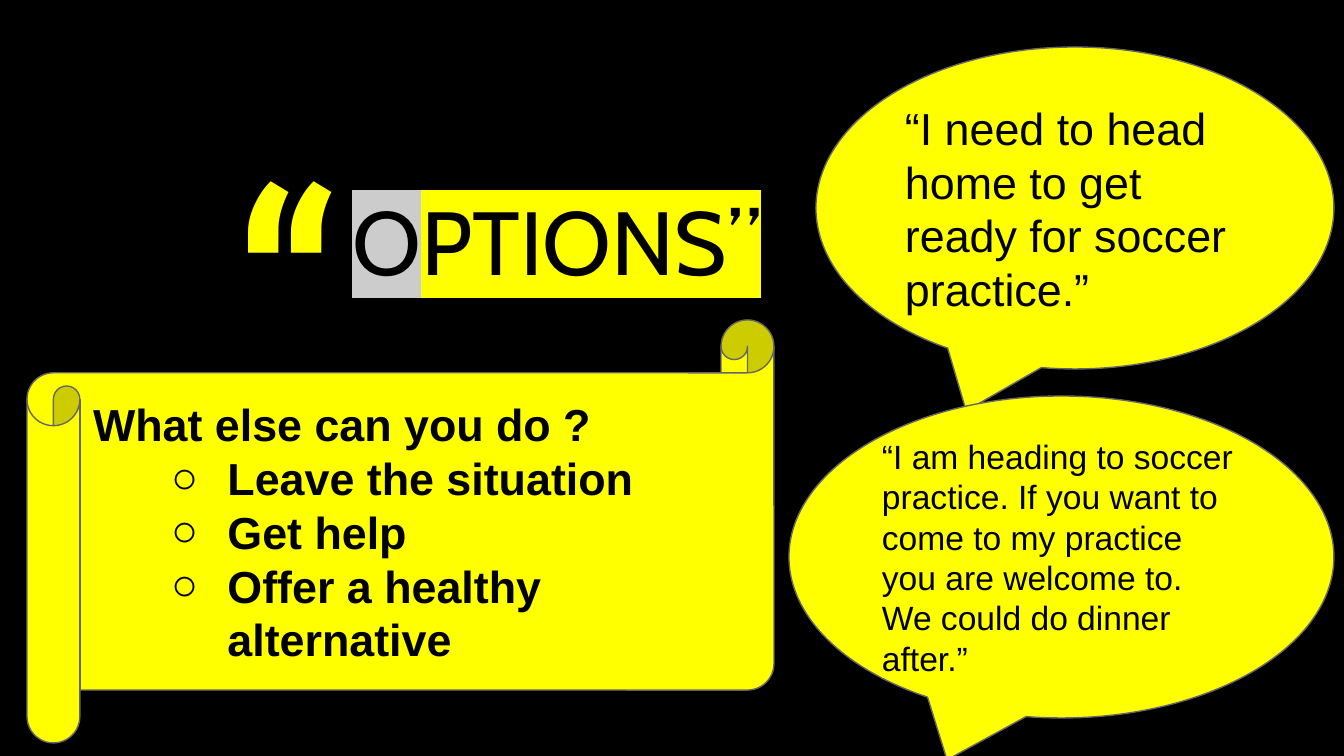
from lxml import etree
from pptx import Presentation
from pptx import util as u
from pptx.dml.color import RGBColor
from pptx.enum import shapes, text
from pptx.oxml.ns import qn

PX = 914400 / 134.4
BLACK = RGBColor(0x00, 0x00, 0x00)
YELLOW = RGBColor(0xFF, 0xFF, 0x00)
SILVER = RGBColor(0xCC, 0xCC, 0xCC)
GRAY = RGBColor(0x66, 0x66, 0x66)


def px(*lengths):
    return [u.Emu(round(n * PX)) for n in lengths]


def add_run(paragraph, words, highlight=None, color=BLACK, **font_format):
    run = paragraph.add_run()
    run.text = words
    run.font.color.rgb = color
    for key, value in font_format.items():
        setattr(run.font, key, value)
    if highlight is not None:
        mark = etree.Element(qn("a:highlight"))
        etree.SubElement(mark, qn("a:srgbClr"), val=str(highlight))
        run.font.fill._xPr.find(qn("a:solidFill")).addnext(mark)


prs = Presentation()
prs.slide_width, prs.slide_height = px(1344, 756)
slide = prs.slides.add_slide(prs.slide_layouts[6])
slide.background.fill.solid()
slide.background.fill.fore_color.rgb = BLACK

frame_format = {"word_wrap": True, "margin_left": u.Inches(0.1), "margin_right": u.Inches(0.1),
                "margin_top": u.Inches(0.1), "margin_bottom": u.Inches(0.1)}

# Heading with its large opening quotation mark
headings = []
for box in ((181, 103, 173, 95), (339, 173, 974, 121)):
    frame = slide.shapes.add_textbox(*px(*box)).text_frame
    for key, value in frame_format.items():
        setattr(frame, key, value)
    headings.append(frame.paragraphs[0])
opening_quote, title = headings
opening_quote.alignment = text.PP_ALIGN.RIGHT
add_run(opening_quote, "“", color=YELLOW, name="Roboto Condensed", size=u.Pt(150), bold=True)
title.space_before = u.Pt(6)
for words, highlight in (("O", SILVER), ("PTIONS”", YELLOW)):
    add_run(title, words, highlight, name="Cabin", size=u.Pt(48))

# Speech bubbles and the scroll of options
CALLOUT = shapes.MSO_SHAPE.OVAL_CALLOUT
SCROLL = shapes.MSO_SHAPE.HORIZONTAL_SCROLL
panels = [
    (CALLOUT, (816, 47, 518, 322), (-0.21, 0.63), 24, False,
     ["“I need to head home to get ready for soccer practice.”"]),
    (CALLOUT, (789, 396, 545, 322), (-0.21, 0.63), 18, False,
     ["“I am heading to soccer practice. If you want to come to my practice "
      "you are welcome to. We could do dinner after.”"]),
    (SCROLL, (27, 320, 747, 423), (0.125,), 24, True,
     ["What else can you do ?", "Leave the situation", "Get help",
      "Offer a healthy alternative"]),
]
for kind, box, adjustments, size, bold, lines in panels:
    panel = slide.shapes.add_shape(kind, *px(*box))
    for i, value in enumerate(adjustments):
        panel.adjustments[i] = value
    panel.shadow.inherit = False
    panel.fill.solid()
    panel.fill.fore_color.rgb = YELLOW
    panel.line.color.rgb = GRAY
    panel.line.width = u.Pt(0.75)
    frame = panel.text_frame
    for key, value in frame_format.items():
        setattr(frame, key, value)
    frame.vertical_anchor = text.MSO_ANCHOR.MIDDLE
    for i, words in enumerate(lines):
        paragraph = frame.add_paragraph() if i else frame.paragraphs[0]
        paragraph.alignment = text.PP_ALIGN.LEFT
        add_run(paragraph, words, YELLOW, name="Arial", size=u.Pt(size), bold=bold)
        if i:
            paragraph.level = 1
            props = paragraph._p.get_or_add_pPr()
            props.set("marL", str(u.Inches(1)))
            props.set("indent", str(u.Inches(-0.42)))
            bullet_color = etree.SubElement(props, qn("a:buClr"))
            etree.SubElement(bullet_color, qn("a:srgbClr"), val=str(BLACK))
            etree.SubElement(props, qn("a:buFont"), typeface="Arial")
            etree.SubElement(props, qn("a:buChar"), char="○")

prs.save("out.pptx")
